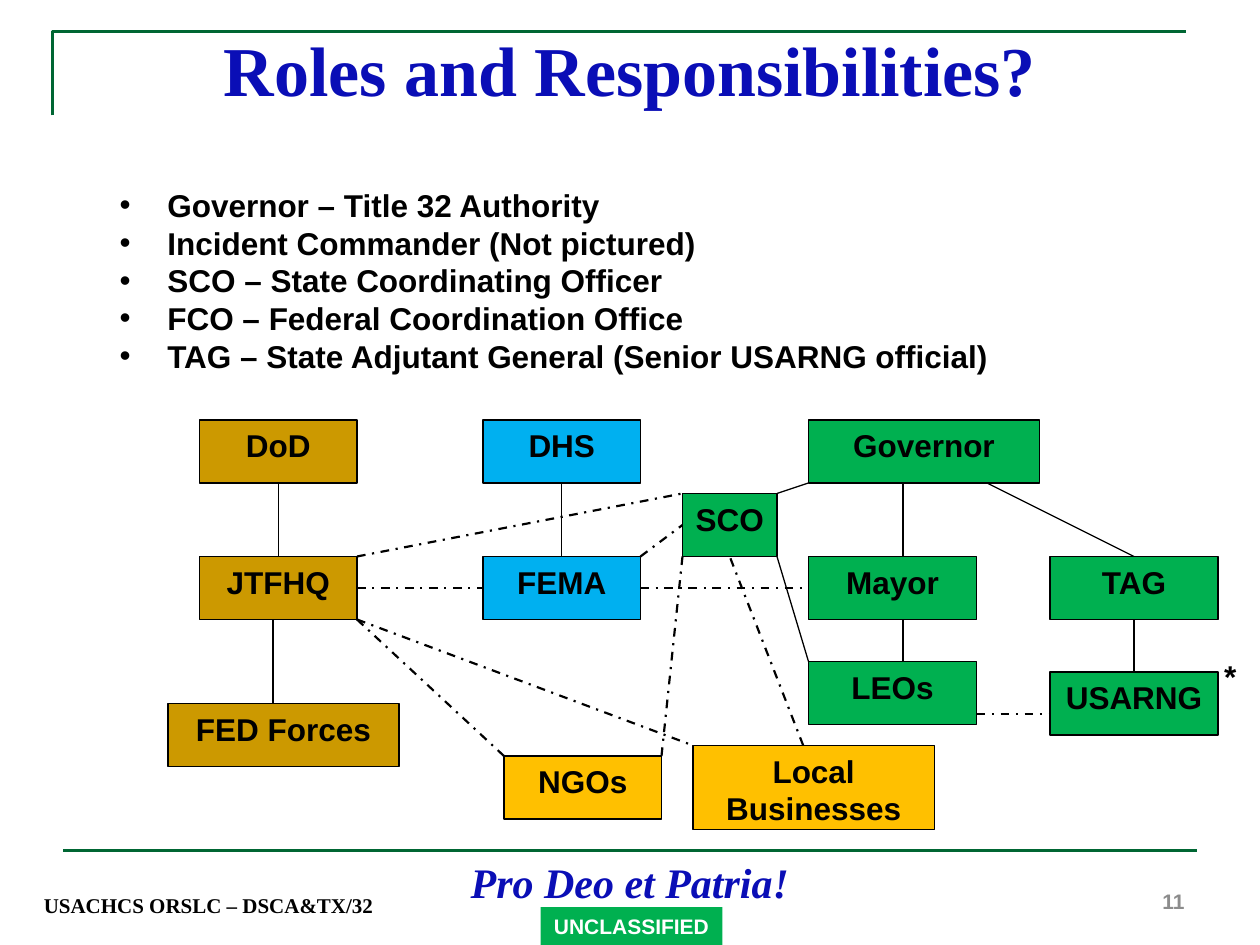
from lxml.etree import SubElement
from pptx import Presentation
from pptx.dml.color import RGBColor
from pptx.enum.dml import MSO_LINE
from pptx.enum.shapes import MSO_CONNECTOR, MSO_SHAPE
from pptx.enum.text import MSO_ANCHOR, PP_ALIGN
from pptx.oxml.ns import qn
from pptx.util import Inches, Pt

BLACK = RGBColor(0x00, 0x00, 0x00)
WHITE = RGBColor(0xFF, 0xFF, 0xFF)
GREY = RGBColor(0x8C, 0x8C, 0x8C)
NAVY = RGBColor(0x0A, 0x0E, 0xB6)
RULE = RGBColor(0x00, 0x66, 0x33)
FEDERAL = RGBColor(0xCC, 0x99, 0x00)
HOMELAND = RGBColor(0x00, 0xB0, 0xF0)
STATE = RGBColor(0x00, 0xB0, 0x50)
CIVIL = RGBColor(0xFF, 0xC0, 0x00)

CELL = Inches(1) // 12  # the slide is a grid of 120 columns by 90 rows
TOP, LEFT, BOTTOM, RIGHT = range(4)

SERIF = {"name": "Times New Roman", "bold": True, "color": NAVY}
SANS = {"name": "Arial", "bold": True, "color": BLACK, "size": Pt(18)}

BULLETS = [
    "Governor – Title 32 Authority",
    "Incident Commander (Not pictured)",
    "SCO – State Coordinating Officer",
    "FCO – Federal Coordination Office",
    "TAG – State Adjutant General (Senior USARNG official)",
]

# name: (column, row, columns wide, rows high, fill)
BOXES = {
    "DoD": (19, 40, 15, 6, FEDERAL),
    "DHS": (46, 40, 15, 6, HOMELAND),
    "Governor": (77, 40, 22, 6, STATE),
    "JTFHQ": (19, 53, 15, 6, FEDERAL),
    "FEMA": (46, 53, 15, 6, HOMELAND),
    "SCO": (65, 47, 9, 6, STATE),
    "Mayor": (77, 53, 16, 6, STATE),
    "TAG": (100, 53, 16, 6, STATE),
    "LEOs": (77, 63, 16, 6, STATE),
    "USARNG": (100, 64, 16, 6, STATE),
    "FED Forces": (16, 67, 22, 6, FEDERAL),
    "NGOs": (48, 72, 15, 6, CIVIL),
    "Local Businesses": (66, 71, 23, 8, CIVIL),
}

# an end is (box name, side) or (column, row)
COMMAND = [
    (("DoD", BOTTOM), ("JTFHQ", TOP)),
    (("DHS", BOTTOM), ("FEMA", TOP)),
    (("TAG", BOTTOM), ("USARNG", TOP)),
    ((94, 46), ("TAG", TOP)),
    ((86, 46), (86, 53)),
    ((86, 59), (86, 63)),
    ((26, 59), (26, 67)),
    ((74, 47), (77, 46)),
    ((74, 53), (77, 63)),
]
COORDINATION = [
    (("JTFHQ", RIGHT), ("FEMA", LEFT)),
    (("FEMA", RIGHT), ("Mayor", LEFT)),
    ((61, 53), ("SCO", LEFT)),
    ((34, 53), (65, 47)),
    ((34, 59), (48, 72)),
    ((34, 59), (66, 71)),
    ((63, 72), (65, 53)),
    ((76.5, 71), ("SCO", BOTTOM)),
    ((93, 68), (100, 68)),
]


def cells(*values):
    return [int(v * CELL) for v in values]


def write(tf, lines, fmt, align=PP_ALIGN.LEFT, anchor=MSO_ANCHOR.TOP, bullet=False):
    tf.vertical_anchor = anchor
    for i, line in enumerate(lines):
        p = tf.paragraphs[0] if i == 0 else tf.add_paragraph()
        p.alignment = align
        if bullet:
            add_bullet(p)
        r = p.add_run()
        r.text = line
        for key, value in fmt.items():
            if key == "color":
                r.font.color.rgb = value
            else:
                setattr(r.font, key, value)


def add_bullet(p):
    pPr = p._p.get_or_add_pPr()
    pPr.set("marL", str(Inches(0.38)))
    pPr.set("indent", str(-Inches(0.38)))
    SubElement(pPr, qn("a:buFont"), typeface="Arial")
    SubElement(pPr, qn("a:buChar"), char="•")


def add_text(s, area, lines, fmt, wrap=True, **layout):
    tf = s.shapes.add_textbox(*cells(*area)).text_frame
    tf.word_wrap = wrap
    write(tf, lines, fmt, **layout)


def add_box(s, area, text, fill, fmt, outline=True, wrap=True):
    sp = s.shapes.add_shape(MSO_SHAPE.RECTANGLE, *cells(*area))
    sp.shadow.inherit = False
    sp.fill.solid()
    sp.fill.fore_color.rgb = fill
    if outline:
        style_line(sp.line, BLACK, 0.75)
    else:
        sp.line.fill.background()
    sp.text_frame.word_wrap = wrap
    write(sp.text_frame, [text], fmt, align=PP_ALIGN.CENTER)
    return sp


def style_line(line, color, width, dash=None):
    line.color.rgb = color
    line.width = Pt(width)
    if dash:
        line.dash_style = dash


def add_line(s, start, end, boxes, color=BLACK, width=0.75, dash=None):
    """Draw a line, joined to a box at each end that names one."""
    free = [(0, 0) if e[0] in boxes else e for e in (start, end)]
    cx = s.shapes.add_connector(MSO_CONNECTOR.STRAIGHT, *cells(*free[0], *free[1]))
    for e, connect in ((start, cx.begin_connect), (end, cx.end_connect)):
        if e[0] in boxes:
            connect(boxes[e[0]], e[1])
    style_line(cx.line, color, width, dash)
    SubElement(cx._element.spPr, qn("a:effectLst"))


def add_corner_rule(s):
    fb = s.shapes.build_freeform(*cells(5, 11))
    fb.add_line_segments([cells(5, 3), cells(113, 3)], close=False)
    sp = fb.convert_to_shape()
    sp.shadow.inherit = False
    sp.fill.background()
    style_line(sp.line, RULE, 1.5)


def add_frame(s):
    """Rules, motto, course name, marking and page number."""
    add_corner_rule(s)
    add_line(s, (6, 81), (114, 81), {}, RULE, 1.5)
    add_text(s, (3, 82, 35, 6), ["USACHCS ORSLC – DSCA&TX/32"],
             SERIF | {"size": Pt(12), "color": BLACK}, anchor=MSO_ANCHOR.BOTTOM)
    add_text(s, (6, 81, 108, 6), ["Pro Deo et Patria!"],
             SERIF | {"size": Pt(24), "italic": True}, align=PP_ALIGN.CENTER)
    add_box(s, (51.5, 86.4, 17.3, 3.6), "UNCLASSIFIED", STATE,
            SANS | {"size": Pt(12), "color": WHITE}, outline=False, wrap=False)
    add_text(s, (86, 83.4, 28, 4.8), ["11"], SANS | {"size": Pt(12), "color": GREY},
             align=PP_ALIGN.RIGHT, anchor=MSO_ANCHOR.MIDDLE)


def add_chart_of_roles(s):
    boxes = {name: add_box(s, area, name, fill, SANS)
             for name, (*area, fill) in BOXES.items()}
    for start, end in COMMAND:
        add_line(s, start, end, boxes)
    for start, end in COORDINATION:
        add_line(s, start, end, boxes, width=1.25, dash=MSO_LINE.DASH_DOT)
    add_text(s, (115.4, 62, 3.6, 4.8), ["*"], SANS, wrap=False)


def main():
    prs = Presentation()
    prs.slide_width, prs.slide_height = cells(120, 90)
    s = prs.slides.add_slide(prs.slide_layouts[6])
    add_frame(s)
    add_text(s, (0, 1.9, 120, 9.2), ["Roles and Responsibilities?"],
             SERIF | {"size": Pt(40)}, align=PP_ALIGN.CENTER)
    add_text(s, (10.2, 17, 99.5, 19.4), BULLETS, SANS,
             anchor=MSO_ANCHOR.MIDDLE, bullet=True)
    add_chart_of_roles(s)
    prs.save("out.pptx")


if __name__ == "__main__":
    main()
